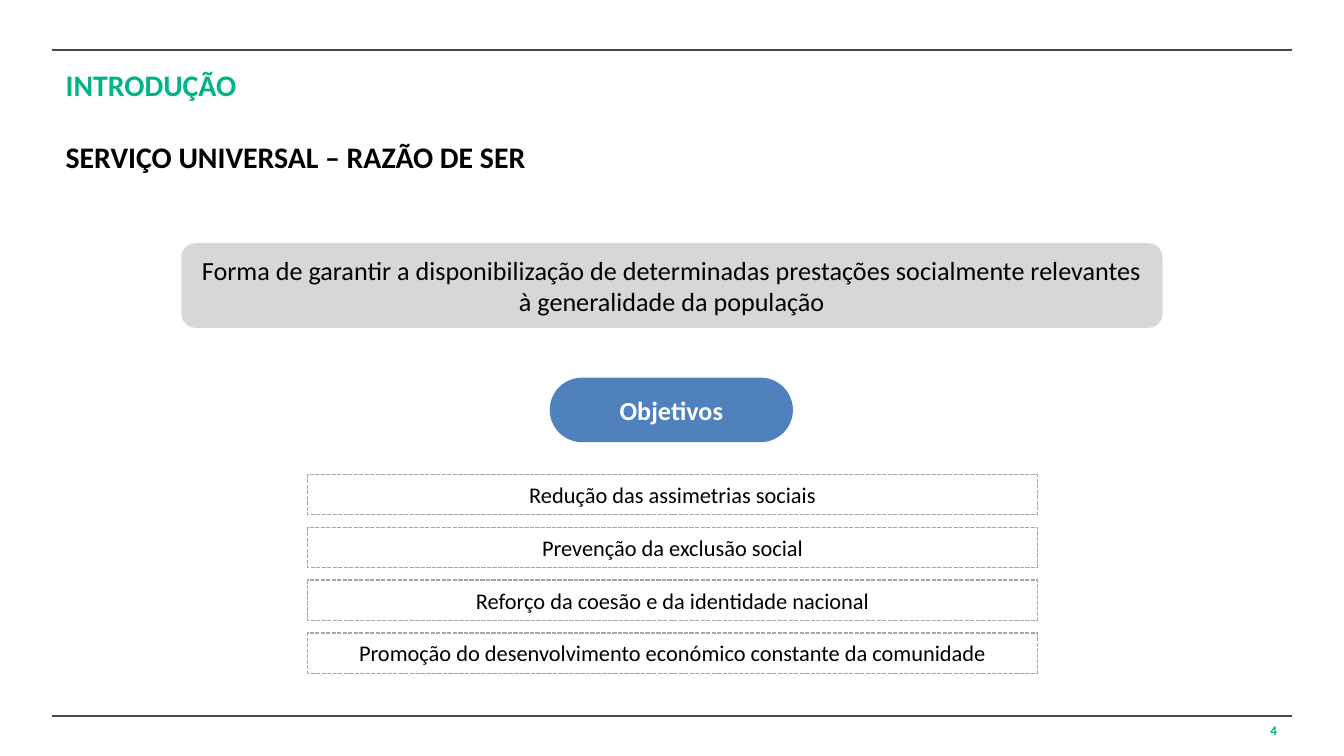
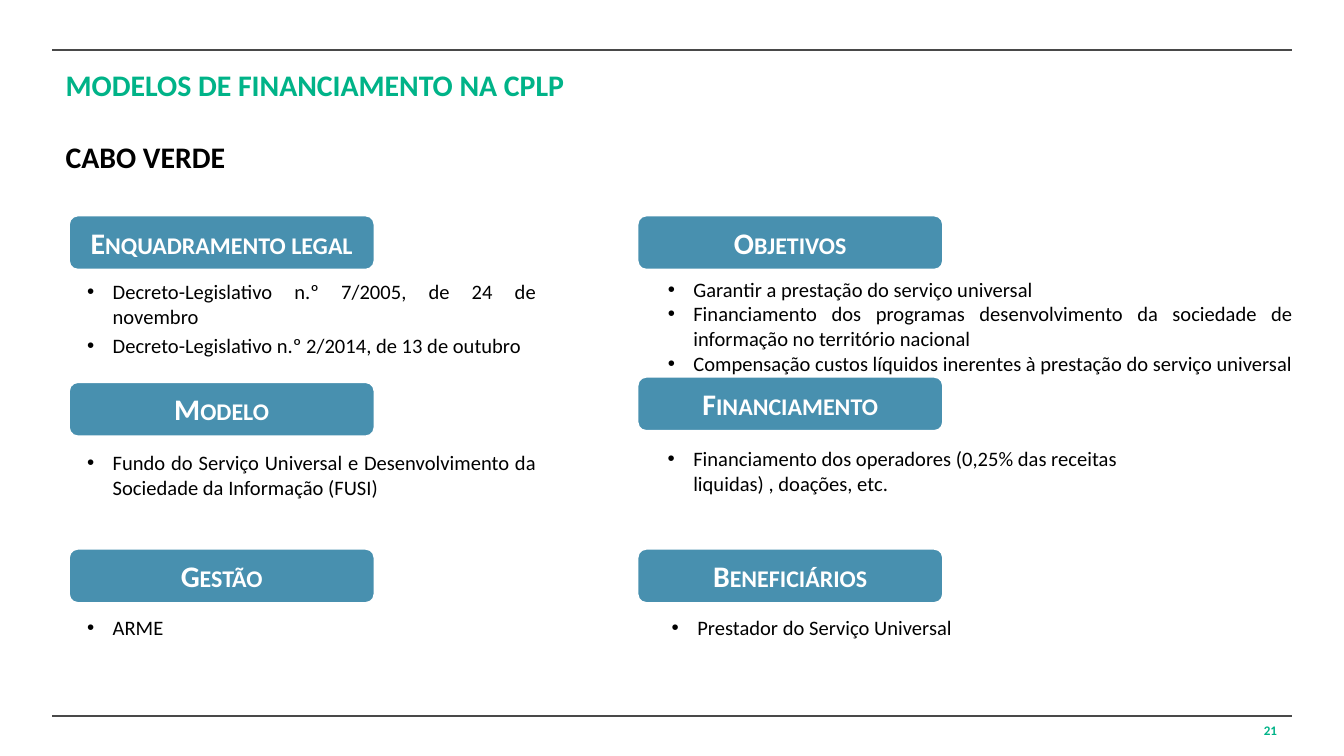
from dataclasses import dataclass

from lxml import etree
from pptx import Presentation
from pptx import util as u
from pptx.dml import color
from pptx.enum import dml, shapes, text
from pptx.oxml import ns


@dataclass(frozen=True)
class Theme:
    font: str = "Calibri"
    green: str = "00B388"
    black: str = "000000"
    white: str = "FFFFFF"
    rule: str = "494949"
    dash: str = "A6A6A6"
    panel: str = "BFBFBF"
    pill: str = "4F81BD"
    card: str = "4890AF"
    heading_size: float = 16
    lead_size: float = 14
    goal_size: float = 12
    body_size: float = 11
    number_size: float = 7


THEME = Theme()
LEFT, CENTER, RIGHT, JUSTIFY = (
    text.PP_ALIGN.LEFT,
    text.PP_ALIGN.CENTER,
    text.PP_ALIGN.RIGHT,
    text.PP_ALIGN.JUSTIFY,
)
PAGE_WIDTH = 10
PAGE_HEIGHT = PAGE_WIDTH * 9 / 16


@dataclass(frozen=True)
class Area:
    left: float
    top: float
    width: float
    height: float

    def lengths(self) -> list:
        return [u.Inches(n) for n in (self.left, self.top, self.width, self.height)]


@dataclass(frozen=True)
class Style:
    size: float
    ink: str = THEME.black
    bold: bool = False
    align: text.PP_ALIGN = CENTER
    small_caps: bool = False
    bullet: bool = False
    gap: float = 0


@dataclass(frozen=True)
class Topic:
    label: str
    left: float
    top: float
    items: tuple
    area: Area
    align: text.PP_ALIGN = JUSTIFY
    gap: float = 0


TITLE = Style(THEME.heading_size, THEME.green, True, JUSTIFY)
SUBTITLE = Style(THEME.heading_size, THEME.black, True, JUSTIFY)
NUMBER = Style(THEME.number_size, THEME.green, True, RIGHT)
CARD = Style(THEME.heading_size, THEME.white, True, small_caps=True)
PILL = Style(THEME.lead_size, THEME.white, True)

GOALS = (
    "Redução das assimetrias sociais",
    "Prevenção da exclusão social",
    "Reforço da coesão e da identidade nacional",
    "Promoção do desenvolvimento económico constante da comunidade",
)
FIRST_GOAL, LAST_GOAL = 3.53, 4.71

LEFT_COLUMN, RIGHT_COLUMN = 0.51, 4.74
ROWS = (1.6, 2.84, 4.08)
TOPICS = (
    Topic("Enquadramento legal", LEFT_COLUMN, ROWS[0],
          ("Decreto-Legislativo n.º 7/2005, de 24 de novembro",
           "Decreto-Legislativo n.º 2/2014, de 13 de outubro"),
          Area(0.55, 2.03, 3.54, 0.76), gap=2.2),
    Topic("Modelo", LEFT_COLUMN, ROWS[1],
          ("Fundo do Serviço Universal e Desenvolvimento da Sociedade da Informação (FUSI)",),
          Area(0.55, 3.3, 3.54, 0.94)),
    Topic("Gestão", LEFT_COLUMN, ROWS[2], ("ARME",), Area(0.55, 4.53, 3.54, 0.76)),
    Topic("Objetivos", RIGHT_COLUMN, ROWS[0],
          ("Garantir a prestação do serviço universal",
           "Financiamento dos programas desenvolvimento da sociedade de informação "
           "no território nacional",
           "Compensação custos líquidos inerentes à prestação do serviço universal"),
          Area(4.87, 2.01, 4.85, 0.94)),
    Topic("Financiamento", RIGHT_COLUMN, 2.8,
          ("Financiamento dos operadores (0,25% das receitas liquidas) , doações, etc.",),
          Area(4.87, 3.27, 4, 0.47), LEFT),
    Topic("Beneficiários", RIGHT_COLUMN, ROWS[2], ("Prestador do Serviço Universal",),
          Area(4.9, 4.53, 4, 0.29), LEFT),
)


def rgb(value: str) -> color.RGBColor:
    return color.RGBColor.from_string(value)


def add_bullet(paragraph) -> None:
    properties = paragraph._p.get_or_add_pPr()
    properties.set("marL", str(u.Inches(0.19)))
    properties.set("indent", str(-u.Inches(0.19)))
    etree.SubElement(properties, ns.qn("a:buFont")).set("typeface", "Arial")
    etree.SubElement(properties, ns.qn("a:buChar")).set("char", "•")


def write(box, lines: tuple, style: Style, anchor=text.MSO_ANCHOR.TOP) -> None:
    frame = box.text_frame
    frame.word_wrap = True
    frame.vertical_anchor = anchor
    frame.text = "\n".join(lines)
    for index, paragraph in enumerate(frame.paragraphs):
        if style.bullet:
            add_bullet(paragraph)
        paragraph.alignment = style.align
        if index and style.gap:
            paragraph.space_before = u.Pt(style.gap)
        for span in paragraph.runs:
            span.font.name = THEME.font
            span.font.size = u.Pt(style.size)
            span.font.bold = style.bold
            span.font.color.rgb = rgb(style.ink)
            if style.small_caps:
                span.font._element.set("cap", "small")


def add_text(page, area: Area, lines: tuple, style: Style) -> None:
    write(page.shapes.add_textbox(*area.lengths()), lines, style)


def add_box(page, kind: shapes.MSO_SHAPE, area: Area, fill: str = "",
            line: str = "", weight: float = 0.75):
    box = page.shapes.add_shape(kind, *area.lengths())
    box.shadow.inherit = False
    if fill:
        box.fill.solid()
        box.fill.fore_color.rgb = rgb(fill)
    else:
        box.fill.background()
    if line:
        box.line.color.rgb = rgb(line)
        box.line.width = u.Pt(weight)
    else:
        box.line.fill.background()
    return box


def add_rule(page, top: float) -> None:
    rule = page.shapes.add_connector(
        shapes.MSO_CONNECTOR.STRAIGHT,
        u.Inches(0.39), u.Inches(top), u.Inches(9.61), u.Inches(top))
    rule.line.color.rgb = rgb(THEME.rule)
    rule.line.width = u.Pt(1)
    etree.SubElement(rule._element.spPr, ns.qn("a:effectLst"))


def add_page(deck, title: str, subtitle: str, number: str):
    page = deck.slides.add_slide(deck.slide_layouts[6])
    for top in (0.37, 5.33):
        add_rule(page, top)
    add_text(page, Area(7.27, 5.33, 2.33, 0.2), (number,), NUMBER)
    add_text(page, Area(0.39, 0.98, 9.21, 0.5), (subtitle,), SUBTITLE)
    add_text(page, Area(0.39, 0.45, 9.21, 0.45), (title,), TITLE)
    return page


def add_goal(page, top: float, goal: str) -> None:
    box = add_box(page, shapes.MSO_SHAPE.RECTANGLE, Area(2.29, top, 5.43, 0.3),
                  line=THEME.dash)
    box.line.dash_style = dml.MSO_LINE.SQUARE_DOT
    write(box, (goal,), Style(THEME.goal_size))


def add_topic(page, topic: Topic) -> None:
    card = add_box(page, shapes.MSO_SHAPE.ROUNDED_RECTANGLE,
                   Area(topic.left, topic.top, 2.28, 0.41),
                   THEME.card, THEME.white, 1.5)
    write(card, (topic.label,), CARD)
    style = Style(THEME.body_size, align=topic.align, bullet=True, gap=topic.gap)
    add_text(page, topic.area, topic.items, style)


def build_introduction(deck) -> None:
    page = add_page(deck, "INTRODUÇÃO", "SERVIÇO UNIVERSAL – RAZÃO DE SER", "4")
    step = (LAST_GOAL - FIRST_GOAL) / (len(GOALS) - 1)
    for index, goal in enumerate(GOALS):
        add_goal(page, FIRST_GOAL + index * step, goal)

    pill = add_box(page, shapes.MSO_SHAPE.ROUND_2_DIAG_RECTANGLE,
                   Area(4.09, 2.81, 1.81, 0.48), THEME.pill)
    pill.adjustments[0] = pill.adjustments[1] = 0.5
    frame = pill.text_frame
    frame.margin_left = frame.margin_right = frame.margin_top = frame.margin_bottom = 0
    write(pill, ("Objetivos",), PILL, text.MSO_ANCHOR.MIDDLE)

    panel = add_box(page, shapes.MSO_SHAPE.ROUNDED_RECTANGLE,
                    Area(1.35, 1.81, 7.3, 0.63), THEME.panel)
    tint = panel._element.spPr.find(".//" + ns.qn("a:srgbClr"))
    etree.SubElement(tint, ns.qn("a:alpha")).set("val", "62000")
    write(panel, ("Forma de garantir a disponibilização de determinadas prestações "
                  "socialmente relevantes à generalidade da população",),
          Style(THEME.lead_size))


def build_cabo_verde(deck) -> None:
    page = add_page(deck, "MODELOS DE FINANCIAMENTO NA CPLP", "CABO VERDE", "21")
    for topic in TOPICS:
        add_topic(page, topic)


def main() -> None:
    deck = Presentation()
    deck.slide_width = u.Inches(PAGE_WIDTH)
    deck.slide_height = u.Inches(PAGE_HEIGHT)
    build_introduction(deck)
    build_cabo_verde(deck)
    deck.save("out.pptx")


if __name__ == "__main__":
    main()
